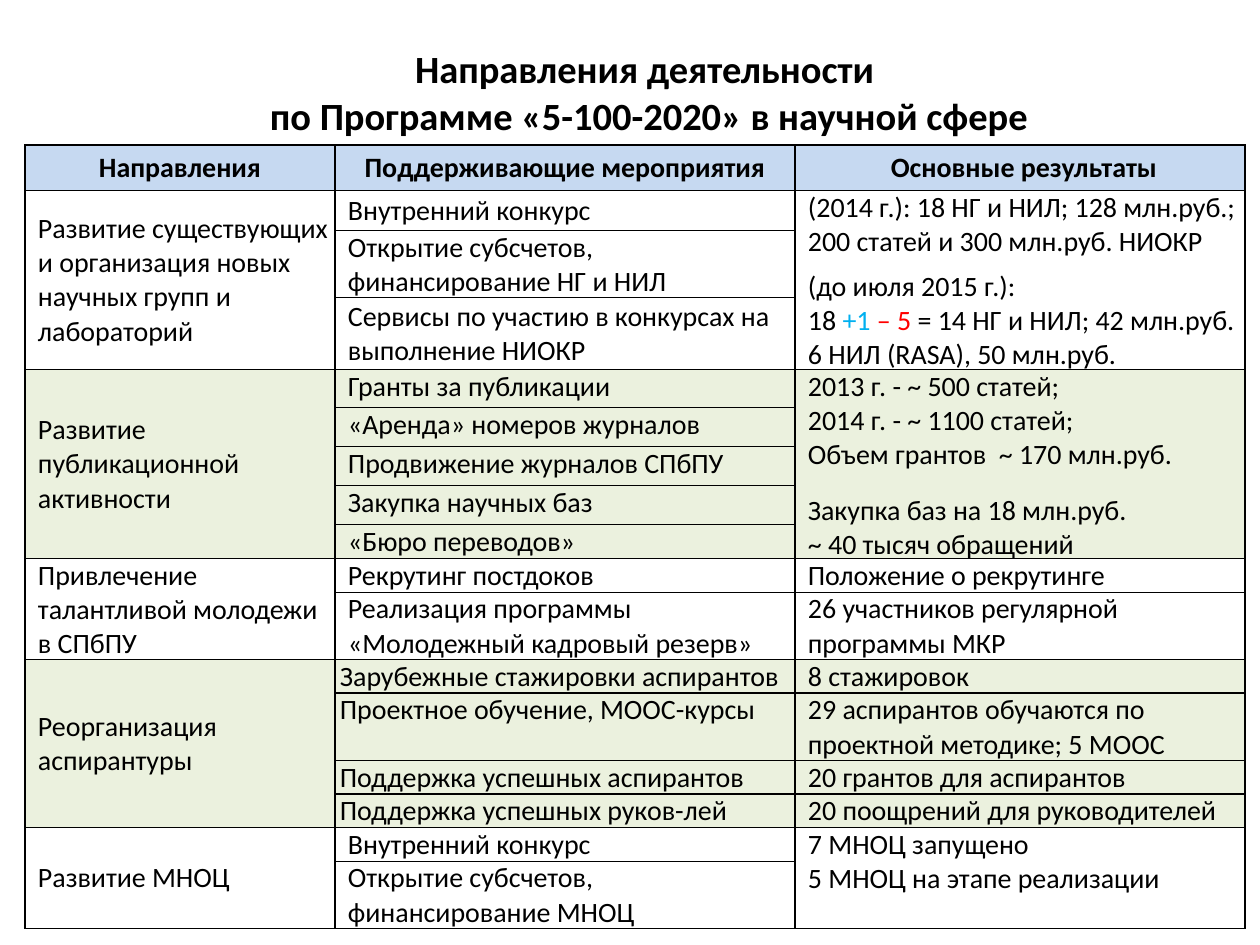
from dataclasses import dataclass

from lxml.etree import SubElement
from pptx import Presentation
from pptx.dml.color import RGBColor
from pptx.enum.text import MSO_ANCHOR, PP_ALIGN
from pptx.oxml.ns import qn
from pptx.util import Emu, Pt

PX = 914400 // 126
FONT = "Calibri"
BLACK = RGBColor(0x00, 0x00, 0x00)
WHITE = RGBColor(0xFF, 0xFF, 0xFF)
HEADER_BLUE = RGBColor(0xC6, 0xD9, 0xF1)
PALE_GREEN = RGBColor(0xEB, 0xF1, 0xDE)
GAIN_BLUE = RGBColor(0x00, 0xB0, 0xF0)
LOSS_RED = RGBColor(0xFF, 0x00, 0x00)

COLUMNS = [310, 460, 450]
ROWS = [39, 40, 52, 72, 38, 39, 39, 39] + [30] * 9
HEADERS = ["Направления", "Поддерживающие мероприятия", "Основные результаты"]
HEADER_INSETS = [(13, 6, 13, 6), (13, 6, 13, 6), (13, 0, 5, 0)]
WIDE_INSETS = (13, 0, 13, 0)
RESULT_INSETS = (13, 0, 5, 0)
NARROW_INSETS = (5, 0, 5, 0)
DIRECTION_INSETS = (13, 6, 5, 6)


@dataclass
class Line:
    runs: list
    before: int = 0


@dataclass
class Direction:
    name: str
    activities: list
    results: list
    fill: RGBColor = WHITE
    anchor: MSO_ANCHOR = MSO_ANCHOR.MIDDLE
    name_insets: tuple = DIRECTION_INSETS
    activity_insets: tuple = WIDE_INSETS


def line(text, before=0):
    return Line([(text, BLACK)], before)


DIRECTIONS = [
    Direction(
        "Развитие существующих и организация новых научных групп и лабораторий",
        ["Внутренний конкурс",
         "Открытие субсчетов, финансирование НГ и НИЛ",
         "Сервисы по участию в конкурсах на выполнение НИОКР"],
        [[line("(2014 г.): 18 НГ и НИЛ; 128 млн.руб.;"),
          line("200 статей и 300 млн.руб. НИОКР"),
          line("(до июля 2015 г.):", 6),
          Line([("18 ", BLACK), ("+1 ", GAIN_BLUE), ("– 5", LOSS_RED),
                (" = 14 НГ и НИЛ; 42 млн.руб.", BLACK)]),
          line("6 НИЛ (RASA), 50 млн.руб.")]],
    ),
    Direction(
        "Развитие публикационной активности",
        ["Гранты за публикации",
         "«Аренда» номеров журналов",
         "Продвижение журналов СПбПУ",
         "Закупка научных баз",
         "«Бюро переводов»"],
        [[line("2013 г. - ~ 500 статей;"),
          line("2014 г. - ~ 1100 статей;"),
          line("Объем грантов  ~ 170 млн.руб."),
          line("Закупка баз на 18 млн.руб.", 12),
          line("~ 40 тысяч обращений")]],
        fill=PALE_GREEN,
        anchor=MSO_ANCHOR.TOP,
    ),
    Direction(
        "Привлечение талантливой молодежи в СПбПУ",
        ["Рекрутинг постдоков",
         "Реализация программы «Молодежный кадровый резерв»"],
        [[line("Положение о рекрутинге")],
         [line("26 участников регулярной программы МКР")]],
        name_insets=RESULT_INSETS,
    ),
    Direction(
        "Реорганизация аспирантуры",
        ["Зарубежные стажировки аспирантов",
         "Проектное обучение, MOOC-курсы",
         "Поддержка успешных аспирантов",
         "Поддержка успешных руков-лей"],
        [[line("8 стажировок")],
         [line("29 аспирантов обучаются по проектной методике; 5 MOOC")],
         [line("20 грантов для аспирантов")],
         [line("20 поощрений для руководителей")]],
        fill=PALE_GREEN,
        anchor=MSO_ANCHOR.TOP,
        activity_insets=NARROW_INSETS,
    ),
    Direction(
        "Развитие МНОЦ",
        ["Внутренний конкурс", "Открытие субсчетов, финансирование МНОЦ"],
        [[line("7 МНОЦ запущено"), line("5 МНОЦ на этапе реализации")]],
    ),
]


def px(value):
    return Emu(value * PX)


def style_paragraph(p, size, bold=False, align=PP_ALIGN.LEFT):
    p.alignment = align
    p.font.name = FONT
    p.font.size = Pt(size)
    p.font.bold = bold
    p.font.color.rgb = BLACK


def add_title(slide):
    sp = slide.shapes.add_textbox(px(123), px(38), px(1052), px(107))
    tf = sp.text_frame
    tf.word_wrap = True
    tf.vertical_anchor = MSO_ANCHOR.MIDDLE
    p = tf.paragraphs[0]
    p.text = "Направления деятельности \vпо Программе «5-100-2020» в научной сфере"
    style_paragraph(p, 22, True, PP_ALIGN.CENTER)


def add_borders(cell):
    props = cell._tc.get_or_add_tcPr()
    for index, side in enumerate(("lnL", "lnR", "lnT", "lnB")):
        ln = props.makeelement(qn(f"a:{side}"), {"w": str(Pt(1))})
        fill = SubElement(ln, qn("a:solidFill"))
        SubElement(fill, qn("a:srgbClr"), {"val": str(BLACK)})
        props.insert(index, ln)


def fill_cell(cell, lines, insets, anchor, bold=False, align=PP_ALIGN.LEFT):
    (cell.margin_left, cell.margin_top,
     cell.margin_right, cell.margin_bottom) = map(px, insets)
    cell.vertical_anchor = anchor
    tf = cell.text_frame
    for index, item in enumerate(lines):
        p = tf.add_paragraph() if index else tf.paragraphs[0]
        style_paragraph(p, 16, bold, align)
        p.space_before = Pt(item.before)
        for text, color in item.runs:
            r = p.add_run()
            r.text = text
            r.font.color.rgb = color


def paint_row(table, row, color):
    for column in range(len(COLUMNS)):
        cell = table.cell(row, column)
        cell.fill.solid()
        cell.fill.fore_color.rgb = color
        add_borders(cell)


def add_direction(table, top, direction):
    bottom = top + len(direction.activities) - 1
    for row in range(top, bottom + 1):
        paint_row(table, row, direction.fill)
    table.cell(top, 0).merge(table.cell(bottom, 0))
    if len(direction.results) == 1:
        table.cell(top, 2).merge(table.cell(bottom, 2))
    fill_cell(table.cell(top, 0), [line(direction.name)],
              direction.name_insets, MSO_ANCHOR.MIDDLE)
    for row, activity in enumerate(direction.activities, top):
        fill_cell(table.cell(row, 1), [line(activity)],
                  direction.activity_insets, direction.anchor)
    for row, result in enumerate(direction.results, top):
        fill_cell(table.cell(row, 2), result, RESULT_INSETS, MSO_ANCHOR.TOP)
    return bottom + 1


def add_directions_table(slide):
    frame = slide.shapes.add_table(len(ROWS), len(COLUMNS), px(25), px(145),
                                   px(sum(COLUMNS)), px(786))
    table = frame.table
    table.first_row = False
    table.horz_banding = False
    for column, width in zip(table.columns, COLUMNS):
        column.width = px(width)
    for row, height in zip(table.rows, ROWS):
        row.height = px(height)
    frame.height = px(786)
    paint_row(table, 0, HEADER_BLUE)
    for column, (text, insets) in enumerate(zip(HEADERS, HEADER_INSETS)):
        fill_cell(table.cell(0, column), [line(text)], insets,
                  MSO_ANCHOR.MIDDLE, True, PP_ALIGN.CENTER)
    row = 1
    for direction in DIRECTIONS:
        row = add_direction(table, row, direction)


def main():
    prs = Presentation()
    prs.slide_width, prs.slide_height = px(1260), px(945)
    slide = prs.slides.add_slide(prs.slide_layouts[6])
    add_title(slide)
    add_directions_table(slide)
    prs.save("out.pptx")


if __name__ == "__main__":
    main()
